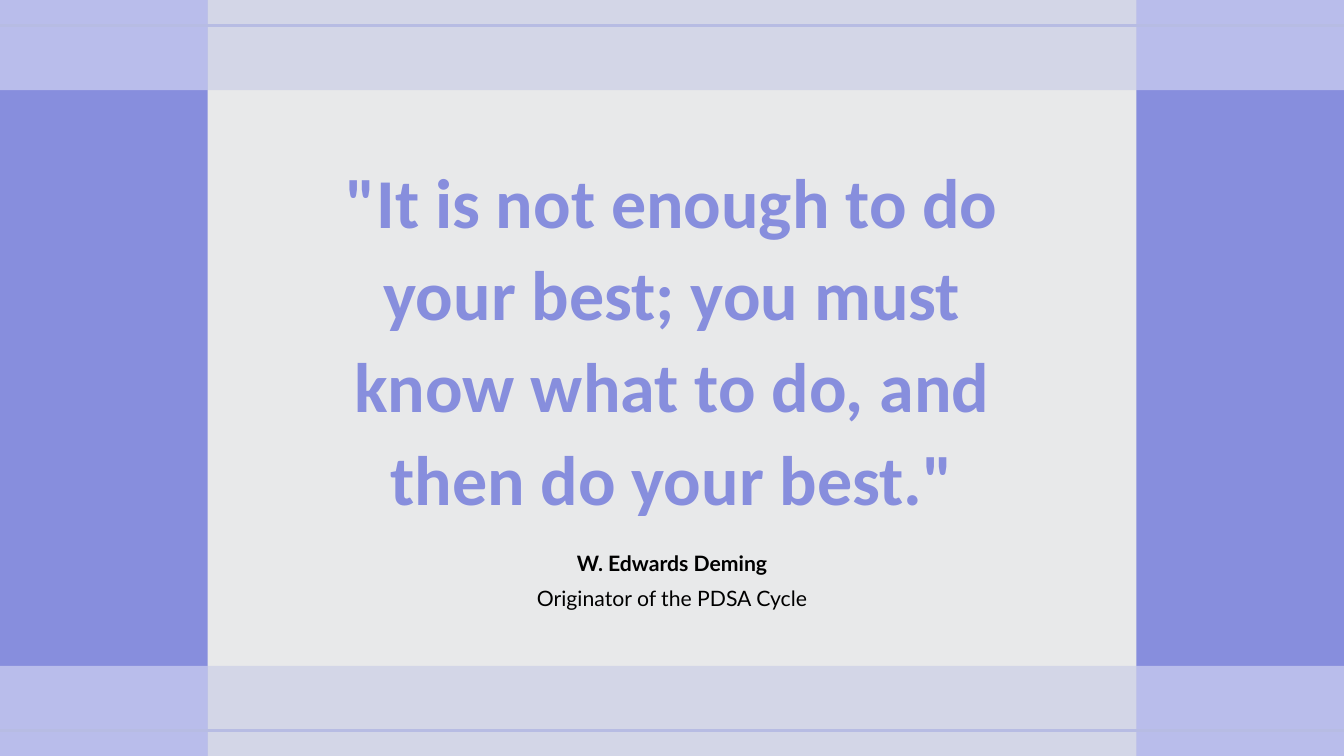
import pptx
import pptx.dml.color
import pptx.enum.shapes
import pptx.enum.text
import pptx.oxml.ns
import pptx.util
from lxml import etree

QUOTE = ('"It is not enough to do your best; you must know what to do, '
         'and then do your best."')
AUTHOR = "W. Edwards Deming"
ROLE = "Originator of the PDSA Cycle"

THEME = {
    "paper": "E8E9EA",
    "violet": "878EDD",
    "lilac": "B7BCE3",
    "white": "FFFFFF",
    "ink": "000000",
    "veil": 42,
    "rule": 3.75,
    "quote": {"name": "Calibri", "size": pptx.util.Pt(75), "bold": True},
    "author": {"name": "Lato", "size": pptx.util.Pt(22.7), "bold": True},
    "role": {"name": "Lato", "size": pptx.util.Pt(22.7), "bold": False},
}

WIDTH, HEIGHT = 20, 11.25
SIDE, BAND, RULE_INSET = 3.09, 1.34, 0.38
COLUMNS = [(0, SIDE), (SIDE, WIDTH - 2 * SIDE), (WIDTH - SIDE, SIDE)]
BAND_TOPS = [0, HEIGHT - BAND]
BAND_COLOURS = ["white", "lilac", "white"]

LINES = [
    (QUOTE, "quote", "violet", 2.23, 11.2, 5.43, 1.1),
    (AUTHOR, "author", "ink", 7.97, 3.88, 0.38, 1.59),
    (ROLE, "role", "ink", 8.48, 6.14, 0.38, 1.59),
]


def colour(key):
    return pptx.dml.color.RGBColor.from_string(THEME[key])


def inches(*lengths):
    return [pptx.util.Inches(length) for length in lengths]


def apply(target, values):
    for key, value in values.items():
        setattr(target, key, value)


def add_panel(slide, left, top, width, height, fill, alpha=None):
    panel = slide.shapes.add_shape(pptx.enum.shapes.MSO_SHAPE.RECTANGLE,
                                   *inches(left, top, width, height))
    panel.shadow.inherit = False
    panel.line.fill.background()
    panel.fill.solid()
    panel.fill.fore_color.rgb = colour(fill)
    if alpha is not None:
        tint = panel.fill._xPr.find(".//" + pptx.oxml.ns.qn("a:srgbClr"))
        etree.SubElement(tint, pptx.oxml.ns.qn("a:alpha"), val=str(alpha * 1000))


def add_rule(slide, y):
    rule = slide.shapes.add_connector(pptx.enum.shapes.MSO_CONNECTOR.STRAIGHT,
                                      *inches(0, y, WIDTH, y))
    rule.line.color.rgb = colour("lilac")
    rule.line.width = pptx.util.Pt(THEME["rule"])
    etree.SubElement(rule._element.spPr, pptx.oxml.ns.qn("a:effectLst"))


def add_centred_text(slide, text, style, ink, top, width, height, spacing):
    box = slide.shapes.add_textbox(
        *inches((WIDTH - width) / 2, top, width, height))
    apply(box.text_frame, {
        "word_wrap": True,
        "auto_size": pptx.enum.text.MSO_AUTO_SIZE.SHAPE_TO_FIT_TEXT,
        "margin_left": 0, "margin_right": 0,
        "margin_top": 0, "margin_bottom": 0,
    })
    paragraph = box.text_frame.paragraphs[0]
    apply(paragraph, {"alignment": pptx.enum.text.PP_ALIGN.CENTER,
                      "line_spacing": spacing})
    words = paragraph.add_run()
    words.text = text
    apply(words.font, THEME[style])
    words.font.color.rgb = colour(ink)


def main():
    deck = pptx.Presentation()
    deck.slide_width, deck.slide_height = inches(WIDTH, HEIGHT)
    slide = deck.slides.add_slide(deck.slide_layouts[6])
    slide.background.fill.solid()
    slide.background.fill.fore_color.rgb = colour("paper")

    for line in LINES:
        add_centred_text(slide, *line)
    for left, width in (COLUMNS[0], COLUMNS[-1]):
        add_panel(slide, left, 0, width, HEIGHT, "violet")
    for (left, width), fill in zip(COLUMNS, BAND_COLOURS):
        for top in BAND_TOPS:
            add_panel(slide, left, top, width, BAND, fill, THEME["veil"])
    for y in (RULE_INSET, HEIGHT - RULE_INSET):
        add_rule(slide, y)

    deck.save("out.pptx")


if __name__ == "__main__":
    main()
